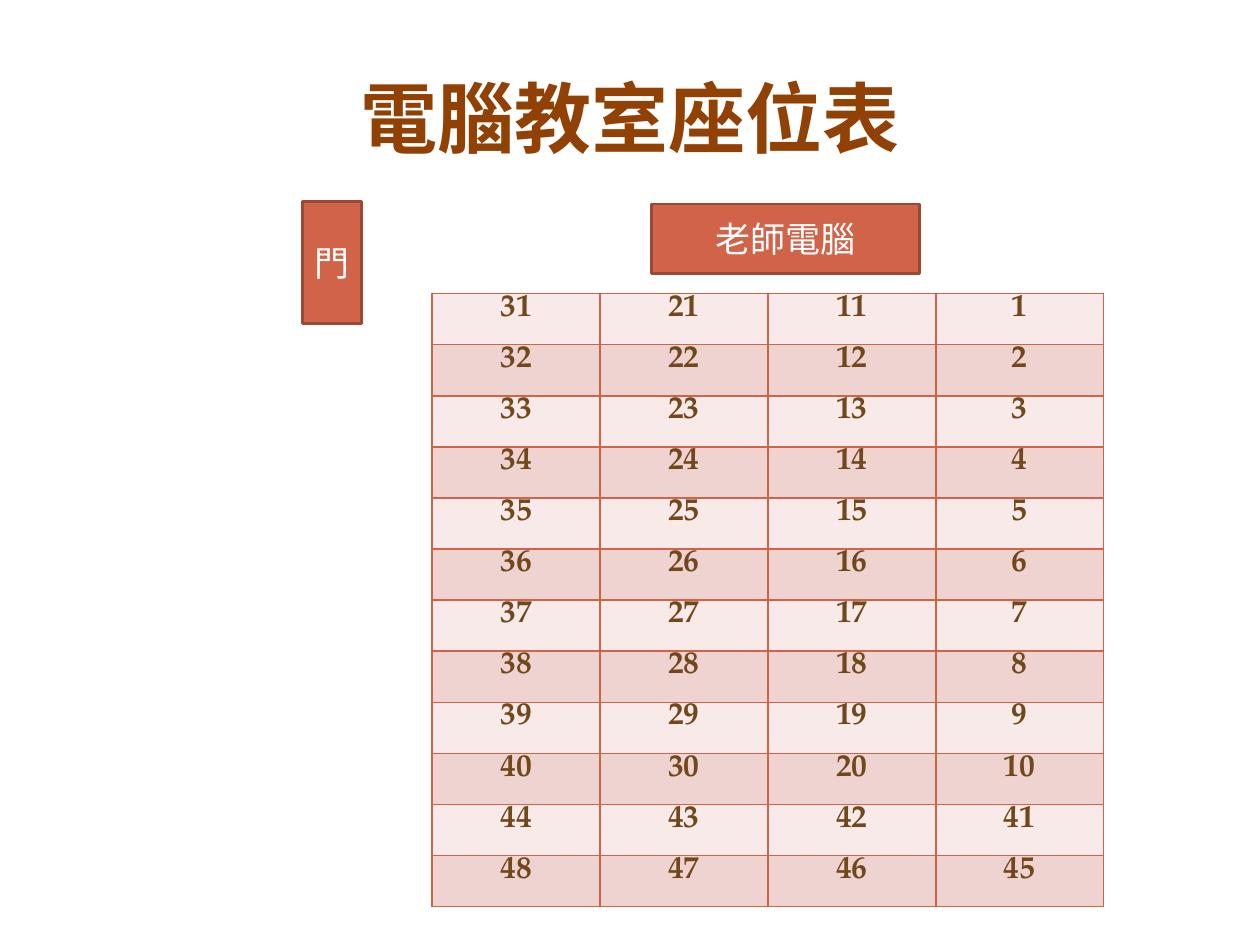
from typing import NamedTuple

import pptx
import pptx.dml.color
import pptx.enum.shapes
import pptx.enum.text
import pptx.oxml
import pptx.oxml.ns
import pptx.util
from pptx.util import Inches

CJK_FONT = "Noto Sans CJK SC"
NUMBER_FONT = "TeX Gyre Pagella"
ACCENT = "D16349"
BANDS = ("F7EAE9", "EED3D0")


class Label(NamedTuple):
    text: str
    left: float
    top: float
    width: float
    height: float


LABELS = [
    Label("老師電腦", 5.17, 1.62, 2.13, 0.55),
    Label("門", 2.4, 1.6, 0.47, 0.97),
]

SEATS = [[start + row for start in (31, 21, 11, 1)] for row in range(10)]
SEATS += [[last - col for col in range(4)] for last in (44, 48)]


def rgb(color: str) -> pptx.dml.color.RGBColor:
    return pptx.dml.color.RGBColor.from_string(color)


def format_text(tf, font: str, size: float, color: str, bold: bool = False) -> None:
    """Centre the text and set its font for Latin and East Asian characters."""
    for p in tf.paragraphs:
        p.alignment = pptx.enum.text.PP_ALIGN.CENTER
        for r in p.runs:
            r.font.name = font
            r.font.size = pptx.util.Pt(size)
            r.font.bold = bold
            r.font.color.rgb = rgb(color)
            ea = pptx.oxml.parse_xml(
                f'<a:ea {pptx.oxml.ns.nsdecls("a")} typeface="{font}"/>')
            r.font._element.find(pptx.oxml.ns.qn("a:latin")).addnext(ea)


def add_title(slide, text: str) -> None:
    sp = slide.shapes.title
    sp.left, sp.top = Inches(0.5), Inches(0.3)
    sp.width, sp.height = Inches(9), Inches(1.25)
    tf = sp.text_frame
    tf.text = text
    tf.vertical_anchor = pptx.enum.text.MSO_ANCHOR.MIDDLE
    format_text(tf, CJK_FONT, 44, "924104", bold=True)


def add_label(slide, label: Label) -> None:
    sp = slide.shapes.add_shape(
        pptx.enum.shapes.MSO_SHAPE.RECTANGLE,
        Inches(label.left), Inches(label.top),
        Inches(label.width), Inches(label.height))
    sp.shadow.inherit = False
    sp.fill.solid()
    sp.fill.fore_color.rgb = rgb(ACCENT)
    sp.line.color.rgb = rgb("9B4936")
    sp.line.width = pptx.util.Pt(1.5)
    tf = sp.text_frame
    tf.word_wrap = True
    tf.margin_left = tf.margin_right = Inches(0.05)
    tf.vertical_anchor = pptx.enum.text.MSO_ANCHOR.MIDDLE
    tf.text = label.text
    format_text(tf, CJK_FONT, 20, "FFFFFF")


def set_borders(cell, color: str, width: float) -> None:
    tc_pr = cell._tc.get_or_add_tcPr()
    for i, side in enumerate(("lnL", "lnR", "lnT", "lnB")):
        tc_pr.insert(i, pptx.oxml.parse_xml(
            f'<a:{side} {pptx.oxml.ns.nsdecls("a")} w="{pptx.util.Pt(width)}">'
            f'<a:solidFill><a:srgbClr val="{color}"/></a:solidFill></a:{side}>'))


def add_seat_table(slide, seats: list[list[int]]) -> None:
    table = slide.shapes.add_table(
        len(seats), len(seats[0]),
        Inches(3.43), Inches(2.33), Inches(5.33), Inches(4.87)).table
    table.first_row = False
    for i, row in enumerate(seats):
        for j, seat in enumerate(row):
            cell = table.cell(i, j)
            cell.text_frame.text = str(seat)
            cell.margin_top = cell.margin_bottom = 0
            cell.fill.solid()
            cell.fill.fore_color.rgb = rgb(BANDS[i % 2])
            set_borders(cell, ACCENT, 1)
            format_text(cell.text_frame, NUMBER_FONT, 18, "71481C", bold=True)


def main() -> None:
    prs = pptx.Presentation()
    prs.slide_width, prs.slide_height = Inches(10), Inches(7.5)
    slide = prs.slides.add_slide(prs.slide_layouts[5])
    add_title(slide, "電腦教室座位表")
    add_seat_table(slide, SEATS)
    for label in LABELS:
        add_label(slide, label)
    prs.save("out.pptx")


if __name__ == "__main__":
    main()
